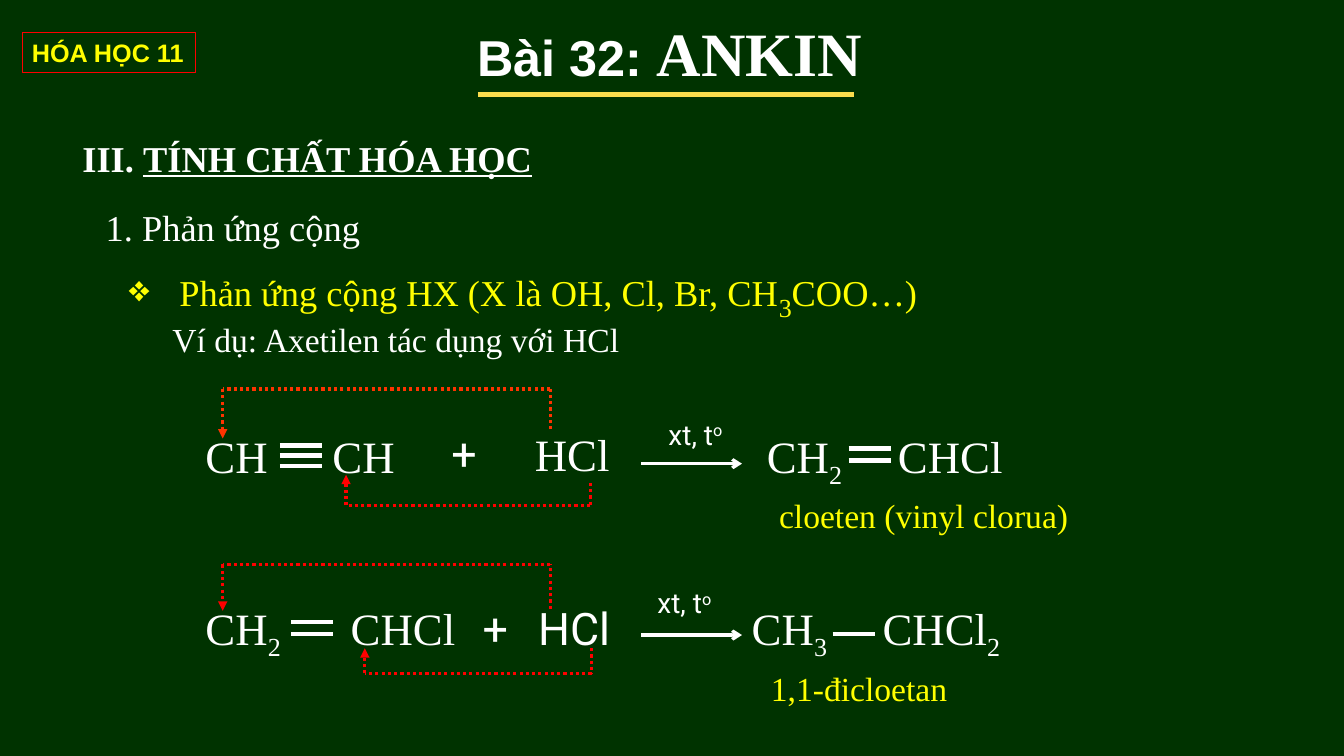
from itertools import pairwise

from lxml import etree
from pptx import Presentation
from pptx.dml.color import RGBColor
from pptx.enum.dml import MSO_LINE
from pptx.enum.shapes import MSO_CONNECTOR, MSO_SHAPE
from pptx.enum.text import MSO_ANCHOR, PP_ALIGN
from pptx.oxml.ns import qn
from pptx.util import Pt

STRAIGHT = MSO_CONNECTOR.STRAIGHT
RECTANGLE = MSO_SHAPE.RECTANGLE
DOTTED = MSO_LINE.ROUND_DOT
TOP = MSO_ANCHOR.TOP
LEFT, CENTER = PP_ALIGN.LEFT, PP_ALIGN.CENTER

SERIF, SANS, ROBOTO = "Times New Roman", "Arial", "Roboto"
GREEN, WHITE, YELLOW = "003300", "FFFFFF", "FFFF00"
GOLD, RED, ORANGE = "FADD4D", "FF0000", "FF3300"
SUB, SUPER = {"baseline": -25}, {"baseline": 30}
FORMULA_HEIGHT = 48


def rgb(value):
    return RGBColor.from_string(value)


class ReactionSlide:
    def __init__(self, slide):
        self.slide = slide
        fill = slide.background.fill
        fill.solid()
        fill.fore_color.rgb = rgb(GREEN)

    def fill_text(self, shape, parts, size, color, font, bold, align, wrap):
        """Fill a shape with one paragraph; each part is (text, changes to the style)."""
        frame = shape.text_frame
        frame.word_wrap = wrap
        frame.vertical_anchor = TOP
        paragraph = frame.paragraphs[0]
        paragraph.alignment = align
        for text, changes in parts:
            run = paragraph.add_run()
            run.text = text
            run.font.name = changes.get("font", font)
            run.font.size = Pt(changes.get("size", size))
            run.font.bold = bold
            run.font.underline = changes.get("underline", False)
            run.font.color.rgb = rgb(color)
            if "baseline" in changes:
                run._r.get_or_add_rPr().set("baseline", str(changes["baseline"] * 1000))
        return paragraph

    def text(self, left, top, width, height, parts, size, color=WHITE, font=SERIF,
             bold=False, align=LEFT, wrap=False):
        box = self.slide.shapes.add_textbox(Pt(left), Pt(top), Pt(width), Pt(height))
        return self.fill_text(box, parts, size, color, font, bold, align, wrap)

    def bullet_text(self, *args, indent, **style):
        properties = self.text(*args, **style)._p.get_or_add_pPr()
        properties.set("marL", str(Pt(indent)))
        properties.set("indent", str(-Pt(indent)))
        etree.SubElement(properties, qn("a:buChar")).set("char", "❖")

    def badge(self, left, top, width, height, label):
        shape = self.slide.shapes.add_shape(RECTANGLE, Pt(left), Pt(top), Pt(width), Pt(height))
        shape.shadow.inherit = False
        shape.fill.background()
        shape.line.color.rgb = rgb(RED)
        shape.line.width = Pt(0.75)
        self.fill_text(shape, [(label, {})], 18, YELLOW, SANS, True, LEFT, False)

    def line(self, start, end, color, width, dash=None, head=None):
        connector = self.slide.shapes.add_connector(
            STRAIGHT, Pt(start[0]), Pt(start[1]), Pt(end[0]), Pt(end[1]))
        connector.line.color.rgb = rgb(color)
        connector.line.width = Pt(width)
        if dash:
            connector.line.dash_style = dash
        if head:
            outline = connector.line._get_or_add_ln()
            etree.SubElement(outline, qn("a:tailEnd")).set("type", head)
        etree.SubElement(connector._element.spPr, qn("a:effectLst"))

    def bond(self, left, top, count, gap=8.6):
        for index in range(count):
            y = top + index * gap
            self.line((left, y), (left + 30, y), WHITE, 3)

    def hook(self, start_x, end_x, start_y, turn_y, end_y, color=RED):
        """Dotted three-part path that ends in an arrowhead."""
        corners = [(start_x, start_y), (start_x, turn_y), (end_x, turn_y), (end_x, end_y)]
        for start, end in pairwise(corners):
            head = "triangle" if end == corners[-1] else None
            self.line(start, end, color, 2.25, DOTTED, head)

    def formula(self, left, top, width, *parts, font=SERIF):
        self.text(left, top, width, FORMULA_HEIGHT, parts, 32, font=font, wrap=True)

    def reaction_arrow(self, y, label_left, label_top):
        self.line((458, y), (530, y), WHITE, 2.25, head="arrow")
        self.text(label_left, label_top, 72, 36, [("xt, t", {}), ("o", SUPER)], 20,
                  font=ROBOTO, align=CENTER, wrap=True)

    def product_name(self, left, top, width, name):
        self.text(left, top, width, 42, [(name, {})], 24, YELLOW, wrap=True)


def main():
    presentation = Presentation()
    presentation.slide_width, presentation.slide_height = Pt(960), Pt(540)
    page = ReactionSlide(presentation.slides.add_slide(presentation.slide_layouts[6]))

    page.badge(15.8, 23, 124, 29, "HÓA HỌC 11")
    page.text(334, 7.2, 291.6, 60.5, [("Bài 32: ", {"font": SANS}), ("ANKIN", {"size": 44})],
              36, bold=True)
    page.line((341.3, 67.7), (609.8, 67.7), GOLD, 3.5)
    page.text(51.8, 93.6, 338.4, 39,
              [("III. ", {}), ("TÍNH CHẤT HÓA HỌC", {"underline": True})], 26, bold=True)
    page.text(68.4, 143.3, 198, 39, [("1. Phản ứng cộng", {})], 26)
    page.bullet_text(85, 183.6, 584, 39,
                     [("Phản ứng cộng HX (X là OH, Cl, Br, CH", {}),
                      ("3", {"size": 32, **SUB}), ("COO…)", {})],
                     26, YELLOW, indent=36)
    page.text(116, 224.6, 337, 36, [("Ví dụ: Axetilen tác dụng với HCl", {})], 24)

    first = 302.4
    page.formula(139.7, first, 66, ("CH", {}))
    page.bond(200, 318.2, 3, gap=7.2)
    page.formula(230.4, first, 66, ("CH", {}))
    page.formula(315.4, 300.2, 36, ("+", {}), font=ROBOTO)
    page.formula(375, 301, 72, ("HCl", {}))
    page.reaction_arrow(331.2, 460.8, 294.5)
    page.formula(540.7, first, 72, ("CH", {}), ("2", SUB))
    page.bond(606.2, 320.4, 2)
    page.formula(634.3, first, 110, ("CHCl", {}))
    page.product_name(549.4, 350, 278.6, "cloeten (vinyl clorua)")
    page.hook(393.1, 159.1, 306.7, 277.9, 313.2, ORANGE)
    page.hook(421.5, 247.2, 344.9, 361, 339.1)

    second = 425.5
    page.formula(139.7, second, 78, ("CH", {}), ("2", SUB))
    page.bond(208, 444.2, 2)
    page.formula(243.4, second, 95, ("CHCl", {}))
    page.formula(337.7, second, 36, ("+", {}), font=ROBOTO)
    page.formula(377.3, second, 75.6, ("HCl", {}), font=ROBOTO)
    page.reaction_arrow(453.6, 452.9, 414.7)
    page.formula(529.9, second, 72, ("CH", {}), ("3", SUB))
    page.bond(594.7, 452.9, 1)
    page.formula(623.3, second, 120, ("CHCl", {}), ("2", SUB))
    page.product_name(543.6, 473.8, 175, "1,1-đicloetan")
    page.hook(393.1, 159.1, 434.9, 403.2, 436.3)
    page.hook(422.6, 260.6, 463, 481, 463)

    presentation.save("out.pptx")


if __name__ == "__main__":
    main()
